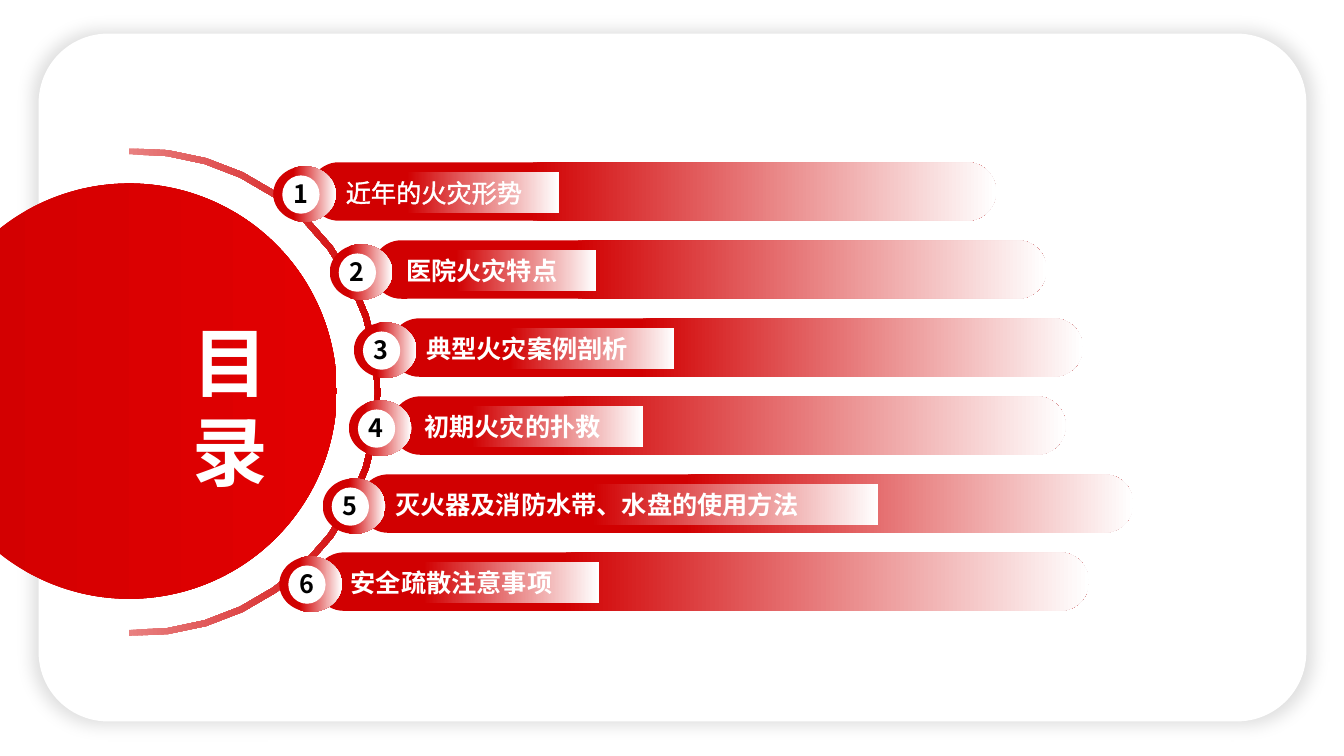
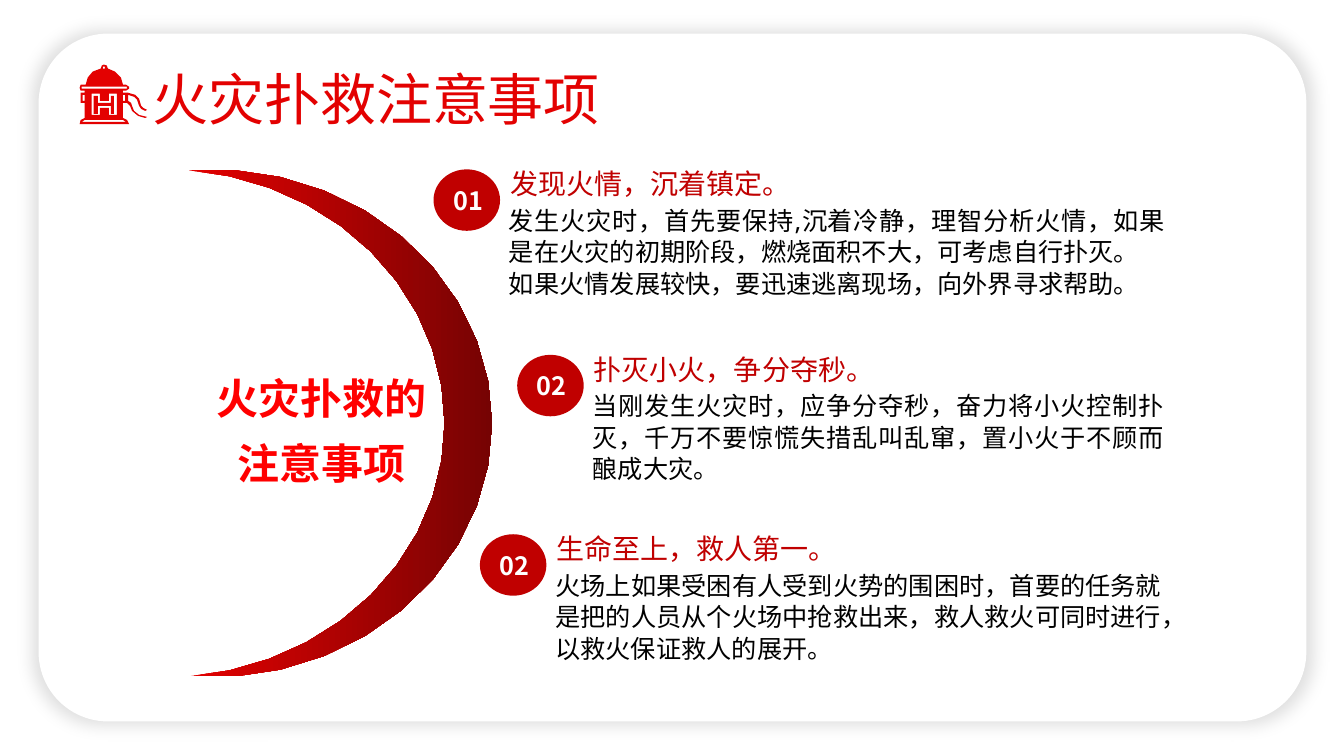
from math import acos, cos, sin

from lxml.etree import SubElement
from pptx import Presentation
from pptx.dml.color import RGBColor
from pptx.enum.shapes import MSO_SHAPE
from pptx.enum.text import MSO_ANCHOR, MSO_AUTO_SIZE, PP_ALIGN
from pptx.oxml.ns import qn
from pptx.util import Inches, Pt

WHITE = RGBColor(0xFF, 0xFF, 0xFF)
BLACK = RGBColor(0x00, 0x00, 0x00)
FADE_RED = RGBColor(0xD1, 0x00, 0x01)
DISC_RED = RGBColor(0xE2, 0x00, 0x01)
PALE_RED = RGBColor(0xE8, 0x80, 0x80)
TITLE_RED = RGBColor(0xE3, 0x01, 0x01)
DARK_RED = RGBColor(0x76, 0x03, 0x03)
PURE_RED = RGBColor(0xFF, 0x00, 0x00)
BADGE_RED = RGBColor(0xC0, 0x00, 0x00)

CJK_FONT = "Noto Sans CJK SC"
BODY_FONT = "Noto Sans"
BODY_SPACING = Pt(22.6)

FIRST_ROW, LAST_ROW = 1.61, 5.48

AGENDA = [
    ("近年的火灾形势", 2.71, 3.07, 6.81, 3.33, 2.21, 0.32),
    ("医院火灾特点", 3.27, 3.69, 6.69, 3.93, 1.98, 0.30),
    ("典型火灾案例剖析", 3.51, 3.87, 6.87, 4.13, 2.56, 0.36),
    ("初期火灾的扑救", 3.46, 3.88, 6.69, 4.11, 2.27, 0.25),
    ("灭火器及消防水带、水盘的使用方法", 3.20, 3.56, 7.68, 3.82, 4.89, 0.42),
    ("安全疏散注意事项", 2.77, 3.12, 7.68, 3.38, 2.56, 0.32),
]

ADVICE = [
    ("01", 4.30, 1.68, 6.70, "发现火情，沉着镇定。",
     "发生火灾时，首先要保持,沉着冷静，理智分析火情，如果是在火灾的初期阶段，燃烧面积不大，可考虑自行扑灭。\n"
     "如果火情发展较快，要迅速逃离现场，向外界寻求帮助。"),
    ("02", 5.13, 3.52, 5.87, "扑灭小火，争分夺秒。",
     "当刚发生火灾时，应争分夺秒，奋力将小火控制扑灭，千万不要惊慌失措乱叫乱窜，置小火于不顾而酿成大灾。"),
    ("02", 4.76, 5.30, 6.21, "生命至上，救人第一。",
     "火场上如果受困有人受到火势的围困时，首要的任务就是把的人员从个火场中抢救出来，"
     "救人救火可同时进行，以救火保证救人的展开。"),
]

HYDRANT_BODY = [
    (1.03, 0.64), (1.06, 0.65), (1.07, 0.68), (1.14, 0.71), (1.2, 0.77), (1.22, 0.84),
    (1.25, 0.84), (1.28, 0.86), (1.28, 0.88), (1.25, 0.9), (1.22, 0.9), (1.22, 0.92),
    (1.27, 0.92), (1.34, 0.94), (1.38, 0.98), (1.4, 1.05), (1.42, 1.07), (1.46, 1.09),
    (1.44, 1.1), (1.4, 1.08), (1.38, 1.05), (1.36, 0.99), (1.33, 0.96), (1.27, 0.94),
    (1.27, 1), (1.3, 1.02), (1.31, 1.05), (1.33, 1.1), (1.38, 1.14), (1.46, 1.16),
    (1.44, 1.17), (1.37, 1.15), (1.31, 1.1), (1.29, 1.05), (1.26, 1.02), (1.22, 1.02),
    (1.22, 1.17), (1.26, 1.19), (1.28, 1.23), (0.79, 1.23), (0.8, 1.19), (0.84, 1.17),
    (0.84, 1.02), (0.8, 1.02), (0.8, 0.92), (0.84, 0.92), (0.84, 0.9), (0.8, 0.9),
    (0.79, 0.87), (0.8, 0.84), (0.85, 0.84), (0.87, 0.77), (0.92, 0.71), (1, 0.68),
    (1.01, 0.65),
]
HYDRANT_BASE = [(0.84, 1.19), (1.22, 1.19), (1.25, 1.21), (0.81, 1.21)]


def place(shape, left, top, width, height):
    """Move and size a shape, in inches."""
    shape.left, shape.top = Inches(left), Inches(top)
    shape.width, shape.height = Inches(width), Inches(height)


def fade(shape, start, end, first_stop=0.0):
    """Fill a shape with a gradient from left to right."""
    shape.fill.gradient()
    shape.fill.gradient_angle = 0
    first, last = shape.fill.gradient_stops
    first.color.rgb, first.position = start, first_stop
    last.color.rgb, last.position = end, 1.0


def paint(shape, color, opacity=100):
    """Give a shape a solid fill, see-through below full opacity."""
    shape.fill.solid()
    shape.fill.fore_color.rgb = color
    if opacity < 100:
        shade = shape._element.spPr.find(qn("a:solidFill")).find(qn("a:srgbClr"))
        SubElement(shade, qn("a:alpha"), val=str(opacity * 1000))


def strip(shape):
    """Remove the shadow and outline of a shape."""
    shape.shadow.inherit = False
    shape.line.fill.background()
    return shape


def add_preset(shapes, kind, left, top, width, height):
    """Add a preset shape without shadow or outline."""
    return strip(shapes.add_shape(
        kind, Inches(left), Inches(top), Inches(width), Inches(height)))


def add_outline(shapes, *contours):
    """Add a freeform of one or more closed contours."""
    points = [[(Inches(x), Inches(y)) for x, y in contour] for contour in contours]
    builder = shapes.build_freeform(*points[0][0])
    builder.add_line_segments(points[0][1:])
    for contour in points[1:]:
        builder.move_to(*contour[0])
        builder.add_line_segments(contour[1:])
    return strip(builder.convert_to_shape())


def write(shape, text, size, color, bold=False, font=CJK_FONT, align=PP_ALIGN.LEFT,
          anchor=MSO_ANCHOR.MIDDLE, spacing=None, insets=(0.1, 0.05, 0.1, 0.05)):
    """Set and format the text of a shape."""
    frame = shape.text_frame
    frame.text = text
    frame.word_wrap = True
    frame.auto_size = MSO_AUTO_SIZE.NONE
    frame.vertical_anchor = anchor
    frame.margin_left, frame.margin_top, frame.margin_right, frame.margin_bottom = map(
        Inches, insets)
    for paragraph in frame.paragraphs:
        paragraph.alignment = align
        paragraph.line_spacing = spacing
        for run in paragraph.runs:
            run.font.size, run.font.bold = Pt(size), bold
            run.font.color.rgb = color
            run.font.name = font
            SubElement(run.font._element, qn("a:ea"), typeface=CJK_FONT)


def outline_text(shape, color, width):
    """Draw a line around the letters of a shape."""
    properties = shape.text_frame.paragraphs[0].runs[0].font._element
    line = SubElement(properties, qn("a:ln"), w=str(Pt(width)))
    SubElement(SubElement(line, qn("a:solidFill")), qn("a:srgbClr"), val=str(color))
    properties.insert(0, line)


def add_text(shapes, left, top, width, height, text, size, color, **style):
    """Add a text box."""
    box = shapes.add_textbox(Inches(left), Inches(top), Inches(width), Inches(height))
    write(box, text, size, color, **style)


def add_card(slide):
    """Add the rounded white card with its soft shadow."""
    card = add_preset(slide.shapes, MSO_SHAPE.ROUNDED_RECTANGLE, 0.39, 0.34, 12.56, 6.81)
    card.adjustments[0] = 0.1
    paint(card, WHITE)
    card.line.color.rgb = WHITE
    card.line.width = Pt(1)
    effects = card._element.spPr.find(qn("a:effectLst"))
    shadow = SubElement(effects, qn("a:outerShdw"), blurRad=str(Pt(12)), dist="0", dir="0",
                        sx="101000", sy="101000", algn="ctr", rotWithShape="0")
    shade = SubElement(shadow, qn("a:srgbClr"), val="000000")
    SubElement(shade, qn("a:alpha"), val="12000")


def set_title(slide, text, position, size, color, **style):
    """Place the title in front of everything else and write it."""
    title = slide.shapes.title
    place(title, *position)
    write(title, text, size, color, **style)
    slide.shapes._spTree.append(title._element)


def arc_points(center_x, center_y, radius_x, radius_y, left, steps=20):
    """Points down the right side of an ellipse, cut off at left."""
    reach = acos((left - center_x) / radius_x)
    angles = [reach * (2 * step / steps - 1) for step in range(steps + 1)]
    return [(center_x + radius_x * cos(a), center_y + radius_y * sin(a)) for a in angles]


def box_points(left, top, right, bottom):
    """Corners of a rectangle."""
    return [(left, top), (right, top), (right, bottom), (left, bottom)]


def letter_points(x, y):
    """Corners of a letter H from its four x and four y positions."""
    return [(x[0], y[0]), (x[1], y[0]), (x[1], y[1]), (x[2], y[1]), (x[2], y[0]),
            (x[3], y[0]), (x[3], y[3]), (x[2], y[3]), (x[2], y[2]), (x[1], y[2]),
            (x[1], y[3]), (x[0], y[3])]


def add_hydrant(shapes):
    """Add the fire hydrant icon beside the title."""
    hydrant = add_outline(
        shapes, HYDRANT_BODY, HYDRANT_BASE,
        box_points(0.81, 0.86, 1.26, 0.88), box_points(0.82, 0.94, 0.84, 1),
        box_points(1.22, 0.94, 1.24, 1), box_points(1.02, 0.66, 1.04, 0.68),
        letter_points((0.91, 0.99, 1.08, 1.16), (0.93, 1, 1.07, 1.14)),
        letter_points((0.93, 0.97, 1.1, 1.13), (0.95, 1.02, 1.05, 1.13)))
    paint(hydrant, TITLE_RED)


def add_agenda_item(slide, number, top, text, ball_left, bar_left, bar_width,
                    label_left, label_width, stop):
    """Add one numbered agenda bar; the first has outlined instead of bold text."""
    shapes = slide.shapes.add_group_shape().shapes
    bar = add_preset(shapes, MSO_SHAPE.ROUNDED_RECTANGLE, bar_left, top, bar_width, 0.58)
    bar.adjustments[0] = 0.5
    label = add_preset(shapes, MSO_SHAPE.RECTANGLE, label_left, top + 0.1, label_width, 0.4)
    ball = add_preset(shapes, MSO_SHAPE.OVAL, ball_left, top + 0.04, 0.62, 0.55)
    for part in (bar, label, ball):
        fade(part, FADE_RED, WHITE, stop)
    write(label, text, 18, WHITE, bold=number > 1)
    if number == 1:
        outline_text(label, WHITE, 1.45)
    dot = add_preset(shapes, MSO_SHAPE.OVAL, ball_left + 0.09, top + 0.13, 0.37, 0.38)
    paint(dot, WHITE)
    add_text(shapes, ball_left + 0.08, top + 0.11, 0.38, 0.4, str(number), 18, BLACK,
             bold=True, align=PP_ALIGN.CENTER)


def add_advice(slide, number, left, top, width, heading, body):
    """Add one numbered piece of advice."""
    shapes = slide.shapes.add_group_shape().shapes
    badge = add_preset(shapes, MSO_SHAPE.OVAL, left, top, 0.66, 0.61)
    paint(badge, BADGE_RED)
    write(badge, number, 18, WHITE, bold=True, insets=(0.1, 0, 0, 0))
    band = add_preset(shapes, MSO_SHAPE.RECTANGLE, left + 0.66, top + 0.03, 6.69, 0.24)
    paint(band, WHITE, opacity=25)
    write(band, heading, 20, BADGE_RED, align=PP_ALIGN.JUSTIFY, spacing=BODY_SPACING)
    add_text(shapes, left + 0.65, top + 0.29, width, 1.38, body, 18, BLACK, font=BODY_FONT,
             align=PP_ALIGN.JUSTIFY, anchor=MSO_ANCHOR.TOP, spacing=BODY_SPACING)


def build_agenda(slide):
    """Build the table of contents."""
    add_card(slide)
    outer = arc_points(1.36, 3.89, 2.42, 2.42, 1.28)
    inner = arc_points(1.36, 3.89, 2.36, 2.36, 1.28)
    fade(add_outline(slide.shapes, outer + inner[::-1]), PALE_RED, FADE_RED)
    pitch = (LAST_ROW - FIRST_ROW) / (len(AGENDA) - 1)
    for row, item in enumerate(AGENDA):
        add_agenda_item(slide, row + 1, FIRST_ROW + row * pitch, *item)
    disc = add_preset(slide.shapes, MSO_SHAPE.OVAL, -0.78, 1.82, 4.12, 4.12)
    fade(disc, FADE_RED, DISC_RED)
    set_title(slide, "目录", (1.53, 3.07, 1.5, 1.92), 54, WHITE, bold=True,
              align=PP_ALIGN.CENTER, spacing=Pt(64))


def build_advice(slide):
    """Build the slide of firefighting advice."""
    add_card(slide)
    add_hydrant(slide.shapes)
    outer = arc_points(2.1, 4.2, 2.78, 2.52, 1.87)
    inner = arc_points(1.63, 4.2, 2.78, 2.52, 1.87)
    crescent = add_outline(slide.shapes, outer + inner[::-1])
    fade(crescent, TITLE_RED, DARK_RED)
    write(crescent, "火灾扑救的注意事项", 30, PURE_RED, bold=True, font=BODY_FONT,
          align=PP_ALIGN.CENTER, spacing=Pt(46.4), insets=(0.1, 0.05, 0.47, 0.05))
    for advice in ADVICE:
        add_advice(slide, *advice)
    set_title(slide, "火灾扑救注意事项", (1.41, 0.59, 5.77, 0.77), 40, TITLE_RED)


def main():
    """Build and save the presentation."""
    deck = Presentation()
    deck.slide_width, deck.slide_height = Inches(13.33), Inches(7.5)
    title_only = deck.slide_layouts[5]
    for build in (build_agenda, build_advice):
        build(deck.slides.add_slide(title_only))
    deck.save("out.pptx")


if __name__ == "__main__":
    main()
